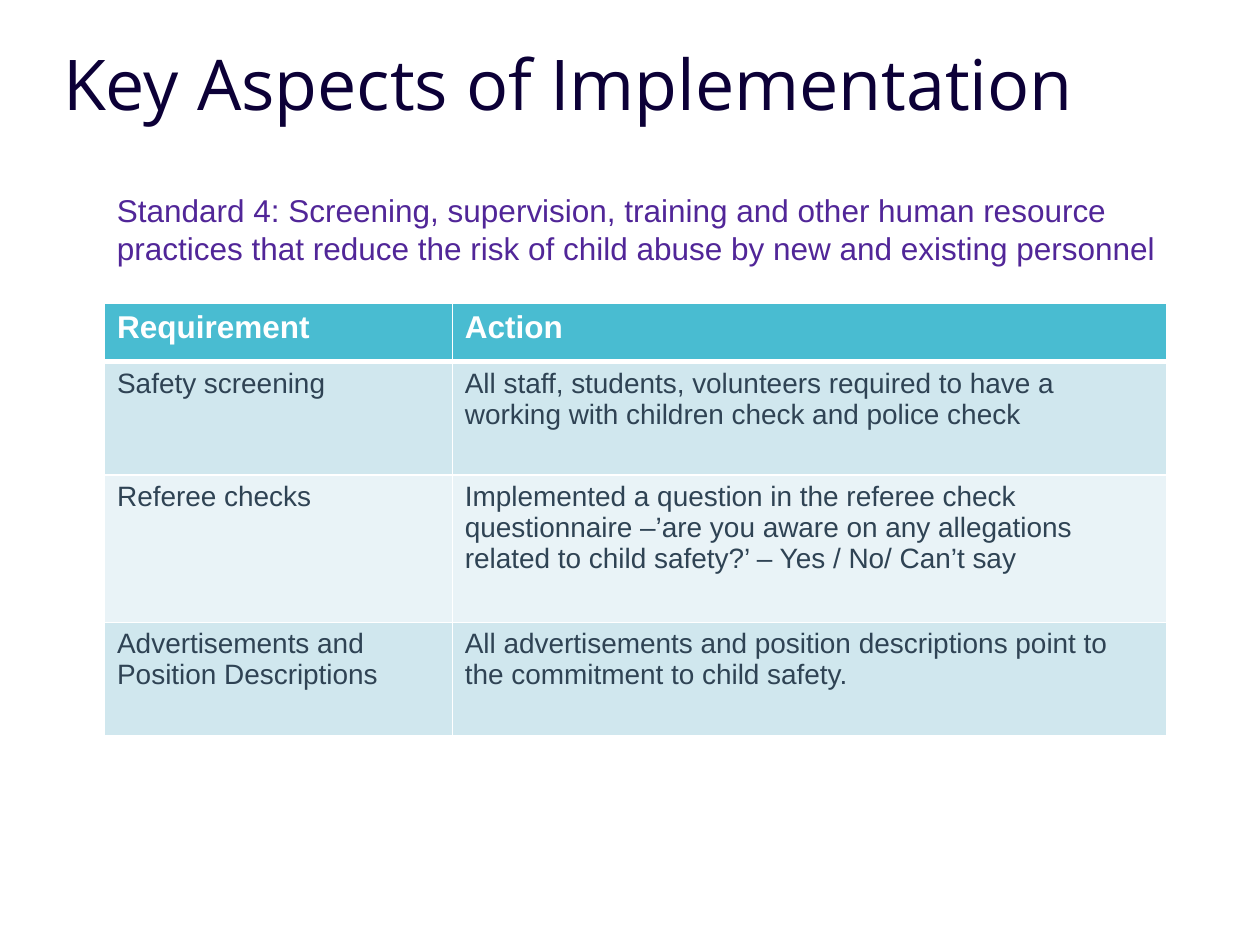
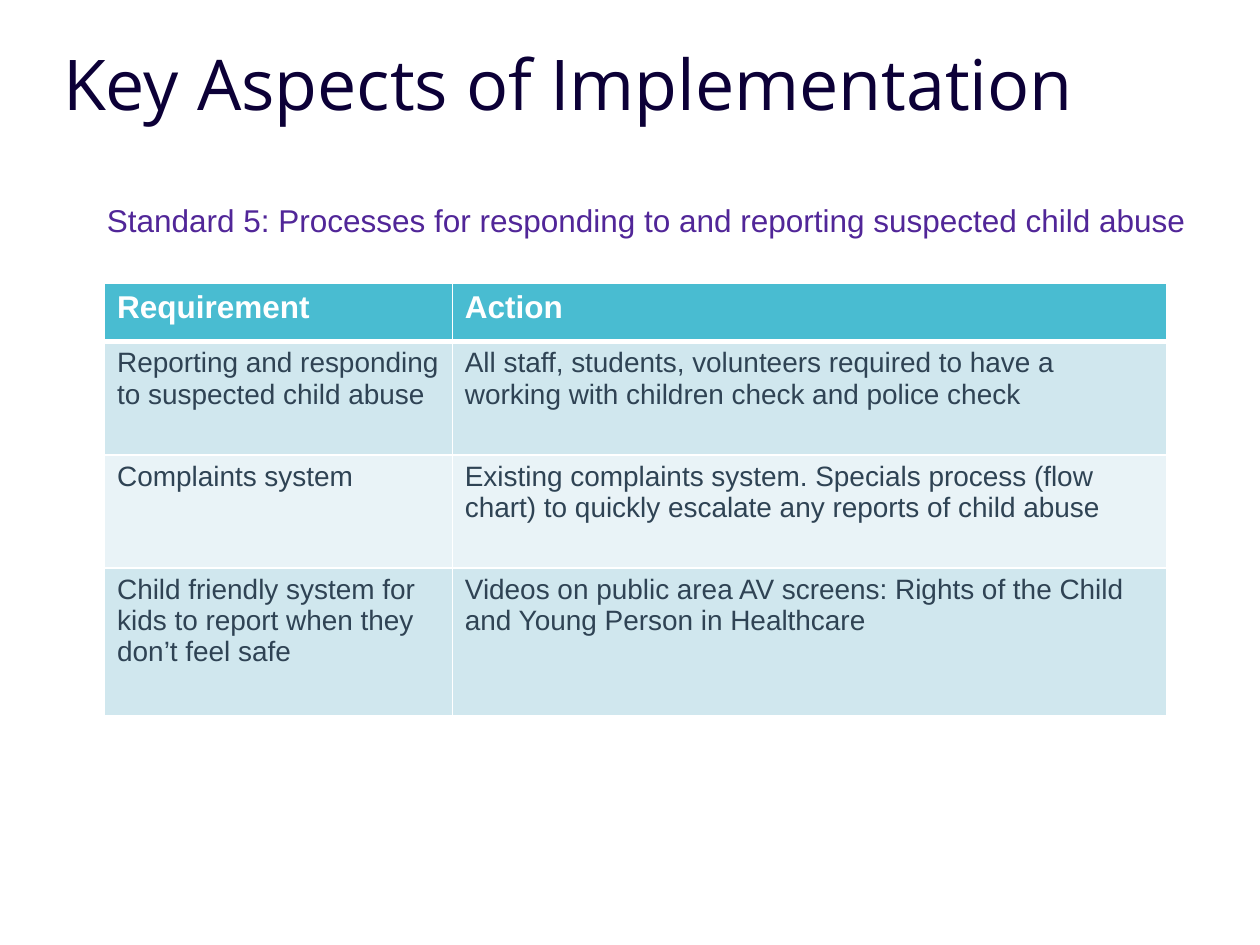
from dataclasses import dataclass

from lxml.etree import SubElement
from pptx import Presentation
from pptx.dml.color import RGBColor as RGB
from pptx.enum.text import MSO_ANCHOR as Anchor, MSO_AUTO_SIZE as Fit, PP_ALIGN as Align
from pptx.oxml.ns import qn
from pptx.slide import Slide
from pptx.text.text import TextFrame
from pptx.util import Inches, Pt


@dataclass(frozen=True)
class Style:
    font: str
    size: int
    color: str
    bold: bool = False


@dataclass(frozen=True)
class Theme:
    title: Style = Style("Open Sans", 40, "0C0037")
    lead: Style = Style("Arial", 18, "512698")
    head: Style = Style("Arial", 18, "FFFFFF", True)
    cell: Style = Style("Arial", 16, "2F4354")
    band: str = "49BCD1"
    stripes: tuple[str, str] = ("D0E7EE", "E9F3F7")
    rule: str = "FFFFFF"
    thin: int = 1
    thick: int = 3


@dataclass(frozen=True)
class Box:
    left: float
    top: float
    width: float
    height: float

    def emu(self) -> list[Inches]:
        return [Inches(n) for n in (self.left, self.top, self.width, self.height)]


@dataclass(frozen=True)
class Row:
    need: str
    action: str
    lines: int = 2


@dataclass(frozen=True)
class Page:
    lead: list[str]
    box: Box
    top: float
    rows: list[Row]


THEME = Theme()
TITLE = "Key Aspects of Implementation"
TITLE_BOX = Box(0.5, 0.37, 8.18, 0.94)
HEAD = Row("Requirement", "Action")
LEFT, COLS = 0.83, (2.76, 5.67)
HEAD_H, PAD_H, LINE_H = 0.46, 0.36, 0.27

PAGES = [
    Page(
        ["Standard 4: Screening, supervision, training and other human resource",
         "practices that reduce the risk of child abuse by new and existing personnel"],
        Box(0.83, 1.47, 8.55, 0.71), 2.41,
        [Row("Safety screening",
             "All staff, students, volunteers required to have a working with "
             "children check and police check"),
         Row("Referee checks",
             "Implemented a question in the referee check questionnaire –’are you "
             "aware on any allegations related to child safety?’ – Yes / No/ Can’t say", 3),
         Row("Advertisements and Position Descriptions",
             "All advertisements and position descriptions point to the commitment "
             "to child safety.")]),
    Page(
        ["Standard 5: Processes for responding to and reporting suspected child abuse"],
        Box(0.75, 1.55, 8.85, 0.4), 2.25,
        [Row("Reporting and responding to suspected child abuse",
             "All staff, students, volunteers required to have a working with "
             "children check and police check"),
         Row("Complaints system",
             "Existing complaints system. Specials process (flow chart) to quickly "
             "escalate any reports of child abuse"),
         Row("Child friendly system for kids to report when they don’t feel safe",
             "Videos on public area AV screens: Rights of the Child and Young Person "
             "in Healthcare", 3)]),
]


def write(frame: TextFrame, lines: list[str], style: Style) -> None:
    frame.text = "\n".join(lines)
    for para in frame.paragraphs:
        para.alignment = Align.LEFT
        font = para.font
        font.name, font.size, font.bold = style.font, Pt(style.size), style.bold
        font.color.rgb = RGB.from_string(style.color)


def edge(cell, widths: dict[str, int]) -> None:
    """Rule the cell's sides; call before filling, as the schema wants lines first."""
    props = cell._tc.get_or_add_tcPr()
    for side in "LRTB":
        line = SubElement(props, qn(f"a:ln{side}"), w=str(Pt(widths.get(side, THEME.thin))))
        fill = SubElement(line, qn("a:solidFill"))
        SubElement(fill, qn("a:srgbClr"), val=THEME.rule)


def add_title(slide: Slide) -> None:
    title = slide.shapes.title
    title.left, title.top, title.width, title.height = TITLE_BOX.emu()
    frame = title.text_frame
    frame.auto_size, frame.word_wrap = Fit.NONE, True
    frame.vertical_anchor = Anchor.TOP
    frame.margin_left = frame.margin_right = frame.margin_top = frame.margin_bottom = 0
    write(frame, [TITLE], THEME.title)
    frame.paragraphs[0].line_spacing = 0.95


def add_lead(slide: Slide, page: Page) -> None:
    frame = slide.shapes.add_textbox(*page.box.emu()).text_frame
    frame.auto_size, frame.word_wrap = Fit.SHAPE_TO_FIT_TEXT, False
    write(frame, page.lead, THEME.lead)


def add_grid(slide: Slide, page: Page) -> None:
    rows = [HEAD, *page.rows]
    highs = [HEAD_H] + [PAD_H + LINE_H * row.lines for row in page.rows]
    box = Box(LEFT, page.top, sum(COLS), sum(highs))
    table = slide.shapes.add_table(len(rows), len(COLS), *box.emu()).table
    for col, width in zip(table.columns, COLS):
        col.width = Inches(width)
    for r, (row, high) in enumerate(zip(rows, highs)):
        table.rows[r].height = Inches(high)
        color = THEME.stripes[(r - 1) % 2] if r else THEME.band
        # The thick rule lies between the heading and the first row.
        widths = {0: {"B": THEME.thick}, 1: {"T": THEME.thick}}.get(r, {})
        for c, text in enumerate((row.need, row.action)):
            cell = table.cell(r, c)
            edge(cell, widths)
            cell.fill.solid()
            cell.fill.fore_color.rgb = RGB.from_string(color)
            write(cell.text_frame, [text], THEME.cell if r else THEME.head)


def main() -> None:
    deck = Presentation()
    deck.slide_width, deck.slide_height = Inches(10), Inches(7.5)
    for page in PAGES:
        slide = deck.slides.add_slide(deck.slide_layouts[5])
        add_grid(slide, page)
        add_title(slide)
        add_lead(slide, page)
    deck.save("out.pptx")


if __name__ == "__main__":
    main()
